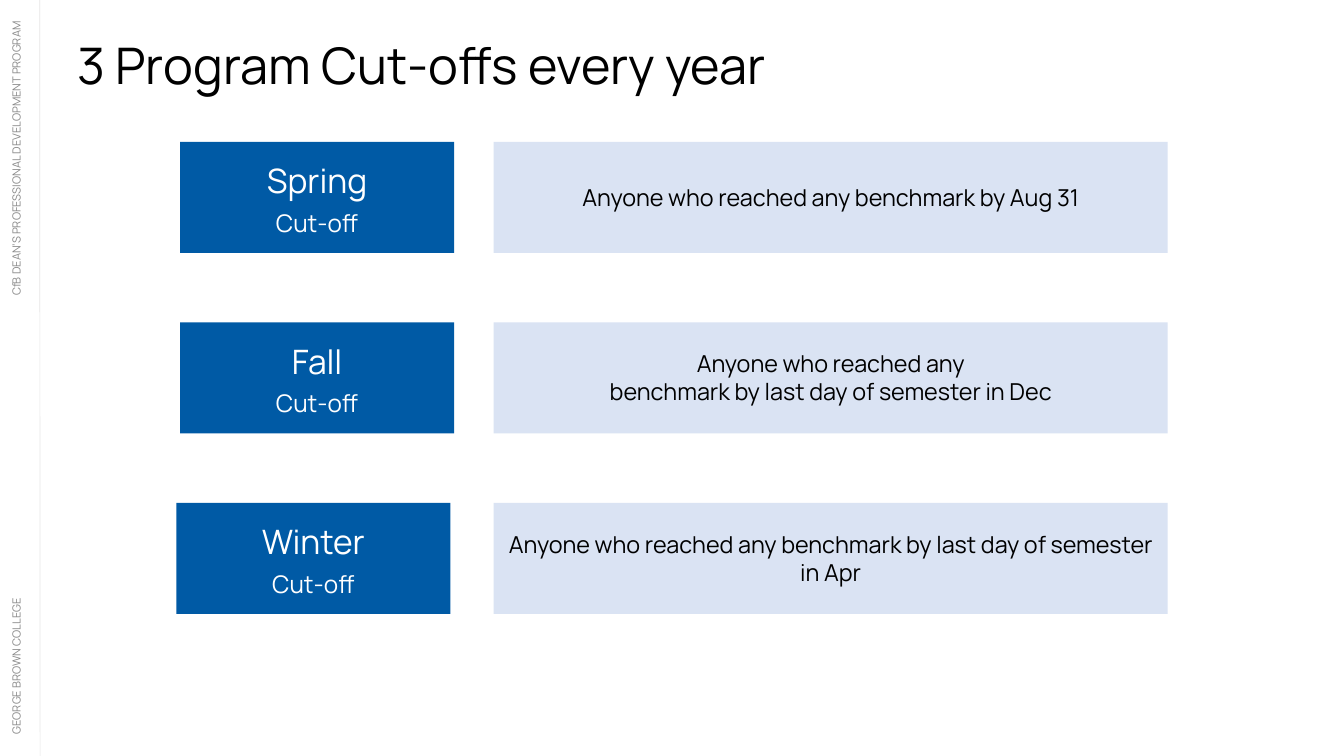
from lxml import etree
from pptx import Presentation
from pptx.dml.color import RGBColor
from pptx.enum.shapes import MSO_CONNECTOR, MSO_SHAPE
from pptx.enum.text import MSO_ANCHOR, PP_ALIGN
from pptx.oxml.ns import qn
from pptx.util import Pt

FONT = "Manrope"
COLORS = {
    "blue": "005AA5",
    "pale": "DAE3F3",
    "rule": "E7E6E6",
    "muted": "898989",
    "black": "000000",
    "white": "FFFFFF",
}
CUTOFFS = [
    ("Spring", ["Anyone who reached any benchmark by Aug 31"]),
    ("Fall", ["Anyone who reached any", "benchmark by last day of semester in Dec"]),
    ("Winter", ["Anyone who reached any benchmark by last day of semester in Apr"]),
]


def rgb(name):
    return RGBColor.from_string(COLORS[name])


def write(sp, lines, color, align=PP_ALIGN.LEFT, anchor=MSO_ANCHOR.TOP, insets=(0, 0, 0, 0)):
    """Fill a shape with (text, size, line height) paragraphs; insets run left, top, right, bottom."""
    tf = sp.text_frame
    tf.word_wrap = True
    tf.vertical_anchor = anchor
    tf.margin_left, tf.margin_top, tf.margin_right, tf.margin_bottom = map(Pt, insets)
    tf.text = "\n".join(text for text, _, _ in lines)
    for p, (_, size, spacing) in zip(tf.paragraphs, lines):
        p.alignment = align
        p.line_spacing = Pt(spacing)
        font = p.runs[0].font
        font.name, font.size = FONT, Pt(size)
        font.color.rgb = rgb(color)


def add_text(slide, box, *args, **kwargs):
    sp = slide.shapes.add_textbox(*map(Pt, box))
    write(sp, *args, **kwargs)
    return sp


def add_panel(slide, box, fill, lines, color, bottom):
    sp = slide.shapes.add_shape(MSO_SHAPE.RECTANGLE, *map(Pt, box))
    sp.shadow.inherit = False
    sp.fill.solid()
    sp.fill.fore_color.rgb = rgb(fill)
    sp.line.fill.background()
    write(sp, lines, color, PP_ALIGN.CENTER, MSO_ANCHOR.MIDDLE, (4.5, 4.5, 4.5, bottom))


def add_sidebar(slide, x, y, w, h):
    """Two vertical captions, read upwards, with a thin rule at the right edge."""
    length = 339
    captions = [
        ("GEORGE BROWN COLLEGE", 23, y + 447.5, PP_ALIGN.LEFT),
        ("CfB DEAN’S PROFESSIONAL DEVELOPMENT PROGRAM", 15, y + 23, PP_ALIGN.RIGHT),
    ]
    for text, height, top, align in captions:
        box = (x + 10 - (length - height) / 2, top + (length - height) / 2, length, height)
        sp = add_text(slide, box, [(text, 12, 14.4)], "muted", align)
        sp.rotation = 270
    rule = slide.shapes.add_connector(
        MSO_CONNECTOR.STRAIGHT, Pt(x + w - 0.5), Pt(y), Pt(x + w), Pt(y + h))
    rule.line.color.rgb = rgb("rule")
    rule.line.width = Pt(0.75)
    etree.SubElement(rule._element.spPr, qn("a:effectLst"))


def add_cutoff(slide, x, y, w, h, season, rule_lines):
    """A season label and, right-aligned in the row, the rule for it."""
    rule_x, rule_w = 529, 722
    label = [(season, 36, 54), ("Cut-off", 26, 39)]
    add_panel(slide, (x, y, w, h), "blue", label, "white", 12.5)
    rule = [(line, 25, 30) for line in rule_lines]
    add_panel(slide, (rule_x, y, rule_w, h), "pale", rule, "black", 5.5)


def main():
    prs = Presentation()
    prs.slide_width, prs.slide_height = Pt(1440), Pt(810)
    slide = prs.slides.add_slide(prs.slide_layouts[6])
    add_sidebar(slide, 0, 0, 43, 810)
    add_text(slide, (83, 43, 1310, 64), [("3 Program Cut-offs every year", 54, 58.3)], "black")
    for i, (season, rule_lines) in enumerate(CUTOFFS):
        x = 189 if season == "Winter" else 193
        add_cutoff(slide, x, 152 + i * 193.4, 293.5, 119, season, rule_lines)
    prs.save("out.pptx")


if __name__ == "__main__":
    main()
